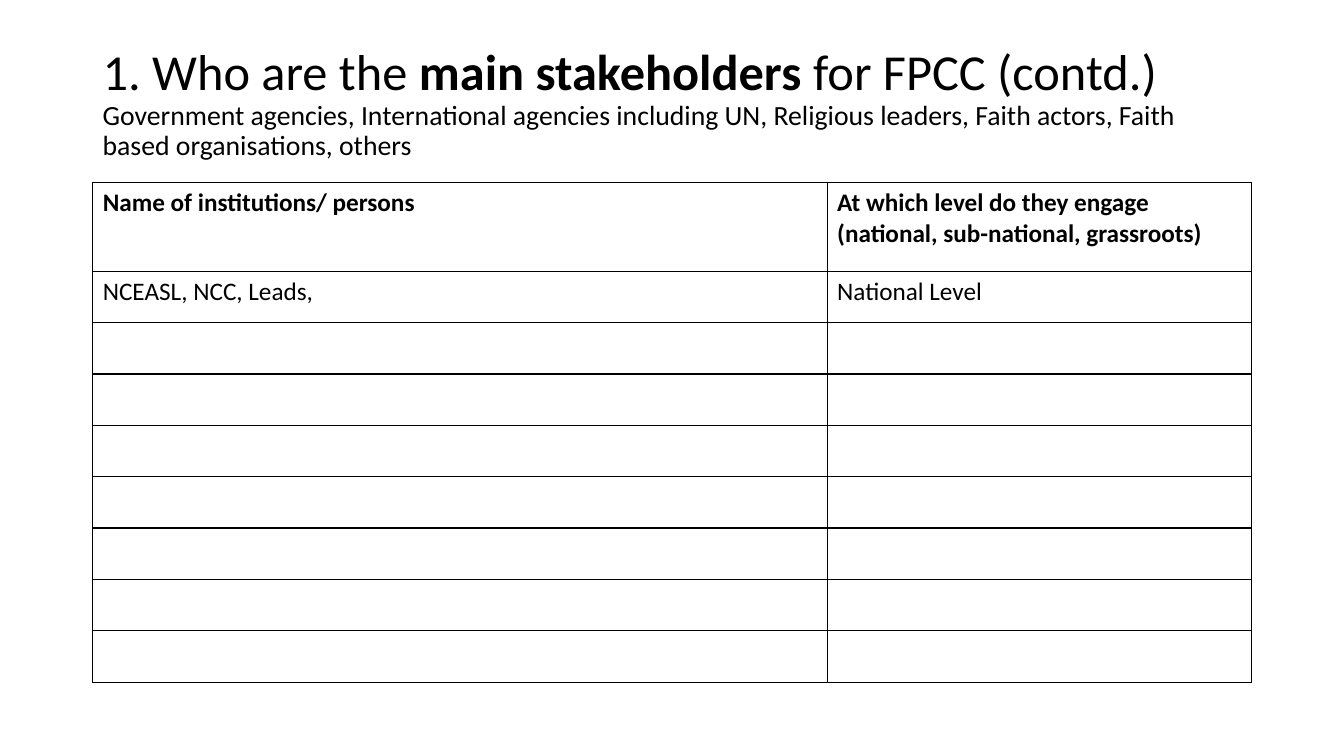
from lxml import etree
from pptx import Presentation, util as u
from pptx.dml.color import RGBColor
from pptx.enum import text
from pptx.oxml.ns import qn

BLACK = RGBColor(0x00, 0x00, 0x00)
WIDTH, HEIGHT = 13.33, 7.5
MARGIN = 0.069  # share of the slide width
CONTENT = 1 - 2 * MARGIN


class Page:
    """Holds the style and the slide; lengths are shares of the slide size."""

    font = {"name": "Calibri", "size": u.Pt(18), "bold": False}

    def __init__(self, deck):
        self.width, self.height = deck.slide_width, deck.slide_height
        self.slide = deck.slides.add_slide(deck.slide_layouts[6])

    def area(self, left, top, width, height):
        return [round(share * side) for share, side in
                zip((left, top, width, height), (self.width, self.height) * 2)]

    def span(self, para, words, **changes):
        run = para.add_run()
        run.text = words
        for name, value in {**self.font, **changes}.items():
            setattr(run.font, name, value)
        run.font.color.rgb = BLACK

    def heading(self, area, lines):
        frame = self.slide.shapes.add_textbox(*self.area(*area)).text_frame
        frame.word_wrap = True
        frame.vertical_anchor = text.MSO_ANCHOR.MIDDLE
        para = frame.paragraphs[0]
        para.line_spacing = 0.9
        for number, (size, spans) in enumerate(lines):
            if number:
                para.add_line_break()
            for words, bold in spans:
                self.span(para, words, size=u.Pt(size), bold=bold)

    def border(self, cell):
        properties = cell._tc.get_or_add_tcPr()
        for side in ("a:lnL", "a:lnR", "a:lnT", "a:lnB"):
            line = etree.SubElement(properties, qn(side), w=str(u.Pt(1)))
            fill = etree.SubElement(line, qn("a:solidFill"))
            etree.SubElement(fill, qn("a:srgbClr"), val=str(BLACK))

    def table(self, area, column_shares, row_heights, content):
        left, top, width, height = self.area(*area)
        table = self.slide.shapes.add_table(
            len(row_heights), len(column_shares), left, top, width, height).table
        table.first_row = table.horz_banding = False
        for column, share in zip(table.columns, column_shares):
            column.width = round(width * share)
        for row, row_height in zip(table.rows, row_heights):
            row.height = u.Inches(row_height)
        for cell in table.iter_cells():
            self.border(cell)
            cell.fill.background()
        for row_number, row in enumerate(content):
            for column_number, lines in enumerate(row):
                frame = table.cell(row_number, column_number).text_frame
                for number, words in enumerate(lines):
                    para = frame.add_paragraph() if number else frame.paragraphs[0]
                    self.span(para, words, bold=row_number == 0)


def main():
    deck = Presentation()
    deck.slide_width, deck.slide_height = u.Inches(WIDTH), u.Inches(HEIGHT)
    page = Page(deck)

    # Title with its smaller second line
    page.heading((MARGIN, 0.52 / HEIGHT, CONTENT, 1.02 / HEIGHT), [
        (36, [("1. Who are the ", False), ("main stakeholders", True),
              (" for FPCC (contd.)", False)]),
        (19.8, [("Government agencies, International agencies including UN, "
                 "Religious leaders, Faith actors, Faith based organisations, "
                 "others", False)]),
    ])

    # Stakeholder table: header, one example and empty rows to fill in
    row_heights = [0.88] + [0.51] * 8
    page.table(
        (MARGIN, 1.81 / HEIGHT, CONTENT, sum(row_heights) / HEIGHT),
        (7.29 / 11.5, 4.21 / 11.5), row_heights, [
            (["Name of institutions/ persons"],
             ["At which level do they engage",
              "(national, sub-national, grassroots)"]),
            (["NCEASL, NCC, Leads,"], ["National Level"]),
        ])

    deck.save("out.pptx")


if __name__ == "__main__":
    main()
